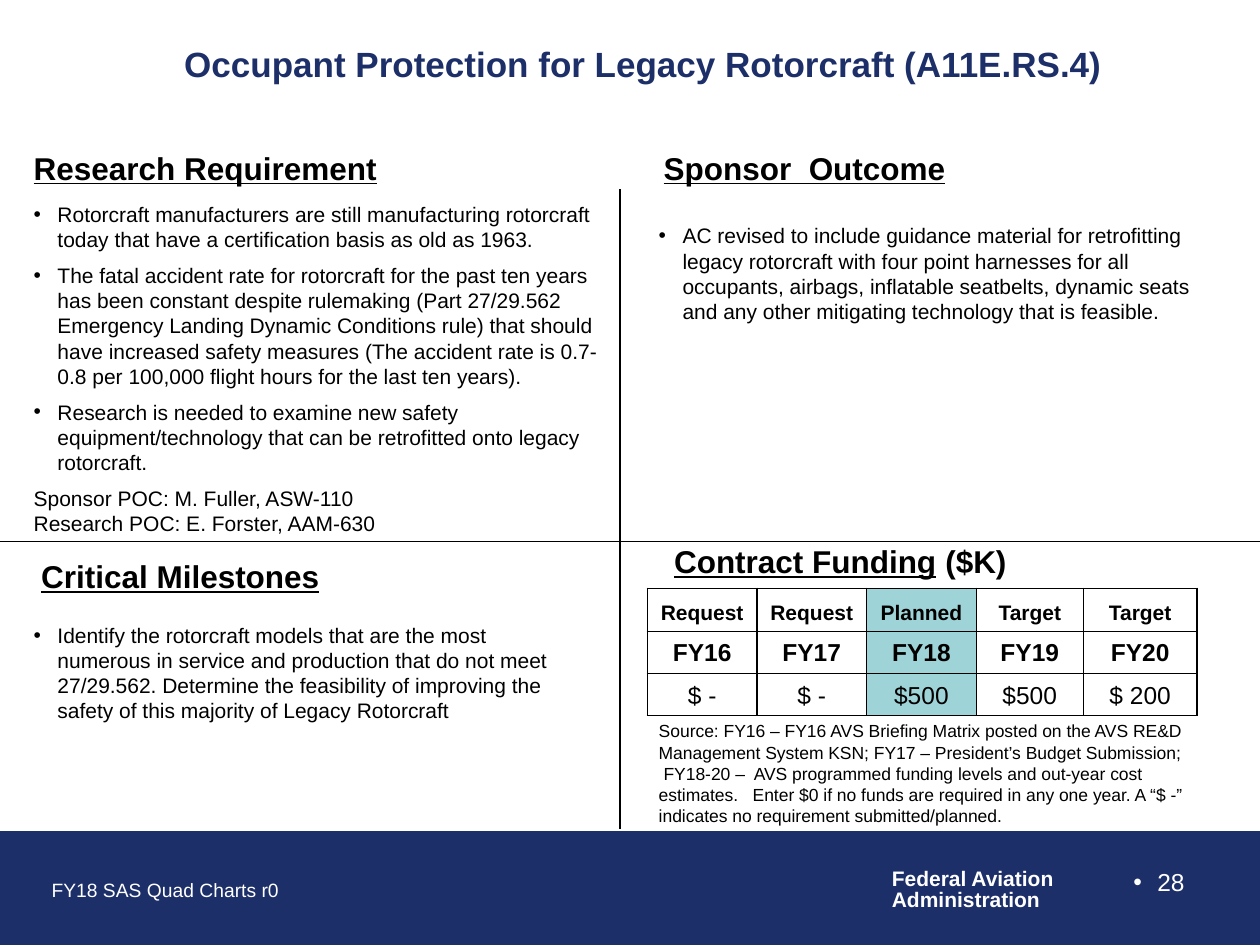
from dataclasses import dataclass
from typing import Optional

from lxml import etree
from pptx import Presentation
from pptx import util as u
from pptx.dml import color
from pptx.enum import shapes, text
from pptx.oxml import ns

NAVY, BLACK, WHITE, TEAL = "1D2F68", "000000", "FFFFFF", "9ED3D7"
LEFT, CENTER, RIGHT = text.PP_ALIGN.LEFT, text.PP_ALIGN.CENTER, text.PP_ALIGN.RIGHT


@dataclass
class Para:
    text: str
    bullet: bool = False
    before: float = 0
    suffix: str = ""  # follows the heading without underline


@dataclass
class Block:
    """A text box; lengths in cm, sizes in points."""
    left: float
    top: float
    width: float
    height: float
    paras: list[Para]
    size: float = 12
    hex_color: str = BLACK
    bold: bool = False
    underline: bool = False
    align: text.PP_ALIGN = LEFT
    anchor: text.MSO_ANCHOR = text.MSO_ANCHOR.TOP
    wrap: bool = True
    line_spacing: Optional[float] = None


def rgb(hex_color: str) -> color.RGBColor:
    return color.RGBColor.from_string(hex_color)


def set_font(paragraph, size: float, hex_color: str, bold: bool) -> None:
    font = paragraph.font
    font.name, font.size, font.bold = "Arial", u.Pt(size), bold
    font.color.rgb = rgb(hex_color)


def add_bullet(paragraph) -> None:
    props = paragraph._p.get_or_add_pPr()
    indent = u.Cm(0.48)
    props.set("marL", str(indent))
    props.set("indent", str(-indent))
    etree.SubElement(props, ns.qn("a:buFont")).set("typeface", "Arial")
    etree.SubElement(props, ns.qn("a:buChar")).set("char", "•")


def draw_block(slide, block: Block) -> None:
    box = slide.shapes.add_textbox(u.Cm(block.left), u.Cm(block.top),
                                   u.Cm(block.width), u.Cm(block.height))
    frame = box.text_frame
    frame.word_wrap, frame.vertical_anchor = block.wrap, block.anchor
    for i, para in enumerate(block.paras):
        paragraph = frame.add_paragraph() if i else frame.paragraphs[0]
        paragraph.alignment = block.align
        if para.before:
            paragraph.space_before = u.Pt(para.before)
        if block.line_spacing:
            paragraph.line_spacing = block.line_spacing
        if para.bullet:
            add_bullet(paragraph)
        set_font(paragraph, block.size, block.hex_color, block.bold)
        run = paragraph.add_run()
        run.text = para.text
        if block.underline:
            run.font.underline = True
        if para.suffix:
            paragraph.add_run().text = para.suffix


def draw_divider(slide, x1: float, y1: float, x2: float, y2: float) -> None:
    line = slide.shapes.add_connector(shapes.MSO_CONNECTOR.STRAIGHT,
                                      u.Cm(x1), u.Cm(y1), u.Cm(x2), u.Cm(y2))
    line.line.color.rgb = rgb(BLACK)
    line.line.width = u.Pt(0.75)
    etree.SubElement(line._element.spPr, ns.qn("a:effectLst"))


def draw_cell_borders(cell) -> None:
    props = cell._tc.get_or_add_tcPr()
    for i, side in enumerate(("lnL", "lnR", "lnT", "lnB")):
        border = etree.Element(ns.qn(f"a:{side}"), w=str(u.Pt(1)))
        fill = etree.SubElement(border, ns.qn("a:solidFill"))
        etree.SubElement(fill, ns.qn("a:srgbClr")).set("val", BLACK)
        props.insert(i, border)


def draw_funding(slide) -> None:
    rows = [["Request", "Request", "Planned", "Target", "Target"],
            ["FY16", "FY17", "FY18", "FY19", "FY20"],
            ["$ -", "$ -", "$500", "$500", "$ 200"]]
    widths, heights = [2.21, 2.21, 2.21, 2.16, 2.29], [0.87, 0.84, 0.84]
    row_styles = [(12, True), (14, True), (14, False)]
    planned_column = 2

    frame = slide.shapes.add_table(len(rows), len(widths), u.Cm(13.05), u.Cm(11.86),
                                   u.Cm(sum(widths)), u.Cm(sum(heights)))
    funding = frame.table
    funding.first_row = funding.horz_banding = False
    for column, width in zip(funding.columns, widths):
        column.width = u.Cm(width)
    for r, (values, height, (size, bold)) in enumerate(zip(rows, heights, row_styles)):
        funding.rows[r].height = u.Cm(height)
        for c, value in enumerate(values):
            cell = funding.cell(r, c)
            cell.text = value
            cell.vertical_anchor = text.MSO_ANCHOR.BOTTOM
            cell.fill.solid()
            cell.fill.fore_color.rgb = rgb(TEAL if c == planned_column else WHITE)
            paragraph = cell.text_frame.paragraphs[0]
            paragraph.alignment = CENTER
            set_font(paragraph, size, BLACK, bold)
            draw_cell_borders(cell)


def heading(left: float, top: float, width: float, title: str, suffix: str = "") -> Block:
    return Block(left, top, width, 0.96, [Para(title, suffix=suffix)],
                 size=18, bold=True, underline=True)


TITLE = Block(1.19, 0.43, 23.55, 1.7, [Para("Occupant Protection for Legacy Rotorcraft (A11E.RS.4)")],
              size=20, hex_color=NAVY, bold=True, align=CENTER, anchor=text.MSO_ANCHOR.MIDDLE)

QUADRANTS = [
    # Research requirement
    heading(0.43, 2.87, 12.7, "Research Requirement"),
    Block(0.43, 3.94, 12.07, 7.9, [
        Para("Rotorcraft manufacturers are still manufacturing rotorcraft today that have a "
             "certification basis as old as 1963.", bullet=True),
        Para("The fatal accident rate for rotorcraft for the past ten years has been constant "
             "despite rulemaking (Part 27/29.562 Emergency Landing Dynamic Conditions rule) that "
             "should have increased safety measures (The accident rate is 0.7-0.8 per 100,000 "
             "flight hours for the last ten years).", bullet=True, before=6),
        Para("Research is needed to examine new safety equipment/technology that can be "
             "retrofitted onto legacy rotorcraft.", bullet=True, before=6),
        Para("Sponsor POC: M. Fuller, ASW-110", before=6),
        Para("Research POC: E. Forster, AAM-630")]),
    # Sponsor outcome
    heading(13.13, 2.87, 11.86, "Sponsor  Outcome"),
    Block(13.03, 4.37, 11.51, 2.31, [
        Para("AC revised to include guidance material for retrofitting legacy rotorcraft with "
             "four point harnesses for all occupants, airbags, inflatable seatbelts, dynamic "
             "seats and any other mitigating technology that is feasible.", bullet=True)]),
    # Critical milestones
    heading(0.58, 11.1, 11.43, "Critical Milestones"),
    Block(0.43, 12.42, 11.56, 2.3, [
        Para("Identify the rotorcraft models that are the most numerous in service and "
             "production that do not meet 27/29.562. Determine the feasibility of improving "
             "the safety of this majority of Legacy Rotorcraft", bullet=True)]),
    # Contract funding
    heading(13.34, 10.8, 11.23, "Contract Funding", " ($K)"),
    Block(13.03, 14.4, 11.1, 2.35, [
        Para("Source: FY16 – FY16 AVS Briefing Matrix posted on the AVS RE&D Management System "
             "KSN; FY17 – President’s Budget Submission;  FY18-20 –  AVS programmed funding "
             "levels and out-year cost estimates.   Enter $0 if no funds are required in any "
             "one year. A “$ -” indicates no requirement submitted/planned.")], size=10),
]

FOOTER = [
    Block(0.79, 17.58, 5.13, 0.74, [Para("FY18 SAS Quad Charts r0")],
          size=11, hex_color=WHITE, wrap=False),
    Block(17.73, 17.4, 3.81, 1.12, [Para("Federal Aviation"), Para("Administration")],
          hex_color=WHITE, bold=True, wrap=False, line_spacing=0.85),
    Block(18.21, 17.35, 5.92, 1.32, [Para("28", bullet=True)],
          size=14, hex_color=WHITE, align=RIGHT),
]


def main() -> None:
    prs = Presentation()
    prs.slide_width, prs.slide_height = u.Cm(25.4), u.Cm(19.05)
    slide = prs.slides.add_slide(prs.slide_layouts[6])

    # Footer band
    band = slide.shapes.add_shape(shapes.MSO_SHAPE.RECTANGLE, u.Cm(0), u.Cm(16.76),
                                  u.Cm(25.4), u.Cm(2.27))
    band.shadow.inherit = False
    band.fill.solid()
    band.fill.fore_color.rgb = band.line.color.rgb = rgb(NAVY)
    band.line.width = u.Pt(0.75)

    # Quadrant dividers
    draw_divider(slide, 12.5, 3.81, 12.5, 16.71)
    draw_divider(slide, 0, 10.92, 25.4, 10.92)

    # Text and funding table
    for block in [TITLE, *QUADRANTS, *FOOTER]:
        draw_block(slide, block)
    draw_funding(slide)

    prs.save("out.pptx")


if __name__ == "__main__":
    main()
